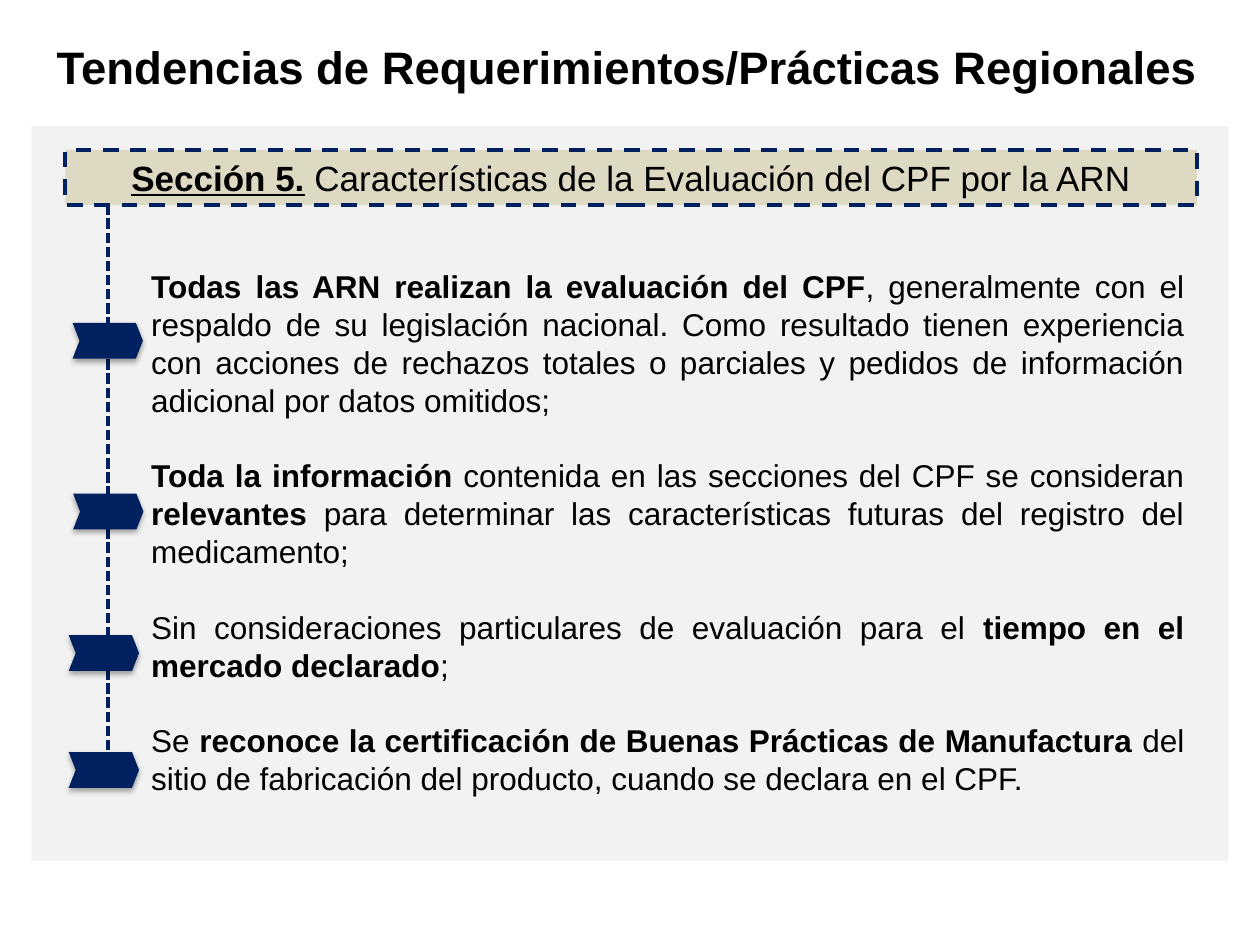
import pptx
import pptx.util
import pptx.dml.color
import pptx.enum.dml
import pptx.enum.shapes
import pptx.enum.text
import pptx.oxml
import pptx.oxml.ns
from lxml import etree

Pt = pptx.util.Pt
ALIGN = pptx.enum.text.PP_ALIGN
DASH = pptx.enum.dml.MSO_LINE
COLORS = {"panel": "F2F2F2", "banner": "DDD9C3", "navy": "002060", "text": "000000"}
LINE_HEIGHT = 21.63

TITLE = "Tendencias de Requerimientos/Prácticas Regionales"
# Each run is (text, bold)
FINDINGS = [
    [("Todas las ARN realizan la evaluación del CPF", True),
     (", generalmente con el respaldo de su legislación nacional. Como resultado "
      "tienen experiencia con acciones de rechazos totales o parciales y pedidos "
      "de información adicional por datos omitidos;", False)],
    [("Toda la información ", True),
     ("contenida en las secciones del CPF se consideran ", False),
     ("relevantes ", True),
     ("para determinar las características futuras del registro del "
      "medicamento;", False)],
    [("Sin consideraciones particulares de evaluación para el ", False),
     ("tiempo en el mercado declarado", True), (";", False)],
    [("Se ", False),
     ("reconoce la certificación de Buenas Prácticas de Manufactura ", True),
     ("del sitio de fabricación del producto, cuando se declara en el CPF.", False)],
]
# Left and top of each marker, relative to the timeline box
MARKERS = [(2.2, 67.7), (2.5, 165.3), (0, 246.2), (0, 313)]


def color(name):
    return pptx.dml.color.RGBColor.from_string(COLORS[name])


def format_run(run, size, bold):
    run.font.name = "Arial"
    run.font.size = Pt(size)
    run.font.bold = bold
    run.font.color.rgb = color("text")


def add_runs(paragraph, pieces, size):
    for text, bold in pieces:
        run = paragraph.add_run()
        run.text = text
        format_run(run, size, bold)


def place(shape, left, top, width, height):
    shape.left, shape.top = Pt(left), Pt(top)
    shape.width, shape.height = Pt(width), Pt(height)


def bring_to_front(slide, shape):
    slide.shapes.element.append(shape.element)


def add_box(slide, fill, left, top, width, height):
    box = slide.shapes.add_shape(pptx.enum.shapes.MSO_SHAPE.RECTANGLE,
                                 Pt(left), Pt(top), Pt(width), Pt(height))
    box.shadow.inherit = False
    box.fill.solid()
    box.fill.fore_color.rgb = color(fill)
    box.line.fill.background()
    return box


def add_banner(slide, left, top, width, height):
    banner = add_box(slide, "banner", left, top, width, height)
    banner.line.color.rgb = color("navy")
    banner.line.width = Pt(2.25)
    banner.line.dash_style = DASH.DASH
    paragraph = banner.text_frame.paragraphs[0]
    paragraph.alignment = ALIGN.CENTER
    add_runs(paragraph, [("Sección 5.", True), (" ", True),
             ("Características de la Evaluación del CPF por la ARN", False)], 20)
    paragraph.runs[0].font.underline = True


def add_marker(shapes, left, top, width=40.2, height=20.4, notch=4):
    middle = top + height / 2
    builder = shapes.build_freeform(Pt(left), Pt(top))
    outline = [(left + width - notch, top), (left + width, middle),
               (left + width - notch, top + height), (left, top + height),
               (left + notch, middle)]
    builder.add_line_segments([(Pt(x), Pt(y)) for x, y in outline], close=True)
    marker = builder.convert_to_shape()
    marker.fill.solid()
    marker.fill.fore_color.rgb = color("navy")
    marker.line.fill.background()
    # Soft shadow below the marker
    marker.shadow.inherit = False
    effects = marker.element.spPr.find(pptx.oxml.ns.qn("a:effectLst"))
    effects.append(pptx.oxml.parse_xml(
        f'<a:outerShdw {pptx.oxml.ns.nsdecls("a")} blurRad="{Pt(3.1)}" '
        f'dist="{Pt(1.8)}" dir="5400000" rotWithShape="0">'
        '<a:srgbClr val="000000"><a:alpha val="35000"/></a:srgbClr></a:outerShdw>'))


def add_timeline(slide, left, top, height):
    shapes = slide.shapes.add_group_shape().shapes
    axis = Pt(left + 22.4)
    line = shapes.add_connector(pptx.enum.shapes.MSO_CONNECTOR.STRAIGHT,
                                axis, Pt(top), axis, Pt(top + height))
    line.line.color.rgb = color("navy")
    line.line.width = Pt(2)
    line.line.dash_style = DASH.SQUARE_DOT
    etree.SubElement(line.element.spPr, pptx.oxml.ns.qn("a:effectLst"))
    for marker_left, marker_top in MARKERS:
        add_marker(shapes, left + marker_left, top + marker_top)


def fill_body(slide, left, top, width, height):
    body = slide.placeholders[1]
    place(body, left, top, width, height)
    bring_to_front(slide, body)
    frame = body.text_frame
    frame.auto_size = pptx.enum.text.MSO_AUTO_SIZE.NONE
    for index, pieces in enumerate(FINDINGS):
        paragraph = frame.add_paragraph() if index else frame.paragraphs[0]
        properties = paragraph._p.get_or_add_pPr()
        properties.set("marL", "0")
        properties.set("indent", "0")
        etree.SubElement(properties, pptx.oxml.ns.qn("a:buNone"))
        paragraph.alignment = ALIGN.JUSTIFY
        paragraph.line_spacing = Pt(LINE_HEIGHT)
        paragraph.space_before = Pt(LINE_HEIGHT if index else 0)
        add_runs(paragraph, pieces, 18)


def fill_title(slide, left, top, width, height):
    title = slide.shapes.title
    place(title, left, top, width, height)
    bring_to_front(slide, title)
    frame = title.text_frame
    frame.text = TITLE
    frame.auto_size = pptx.enum.text.MSO_AUTO_SIZE.NONE
    frame.vertical_anchor = pptx.enum.text.MSO_ANCHOR.MIDDLE
    frame.paragraphs[0].alignment = ALIGN.CENTER
    format_run(frame.paragraphs[0].runs[0], 26, True)


def main():
    presentation = pptx.Presentation()
    presentation.slide_width, presentation.slide_height = Pt(720), Pt(540)
    slide = presentation.slides.add_slide(presentation.slide_layouts[1])
    add_box(slide, "panel", 18, 72, 684, 420)
    add_banner(slide, 37.4, 85.7, 646.6, 31.5)
    add_timeline(slide, 39.3, 116.8, 327.4)
    fill_body(slide, 79.2, 149, 604.8, 312.5)
    fill_title(slide, -1.5, 21.6, 720, 32.4)
    presentation.save("out.pptx")


if __name__ == "__main__":
    main()
